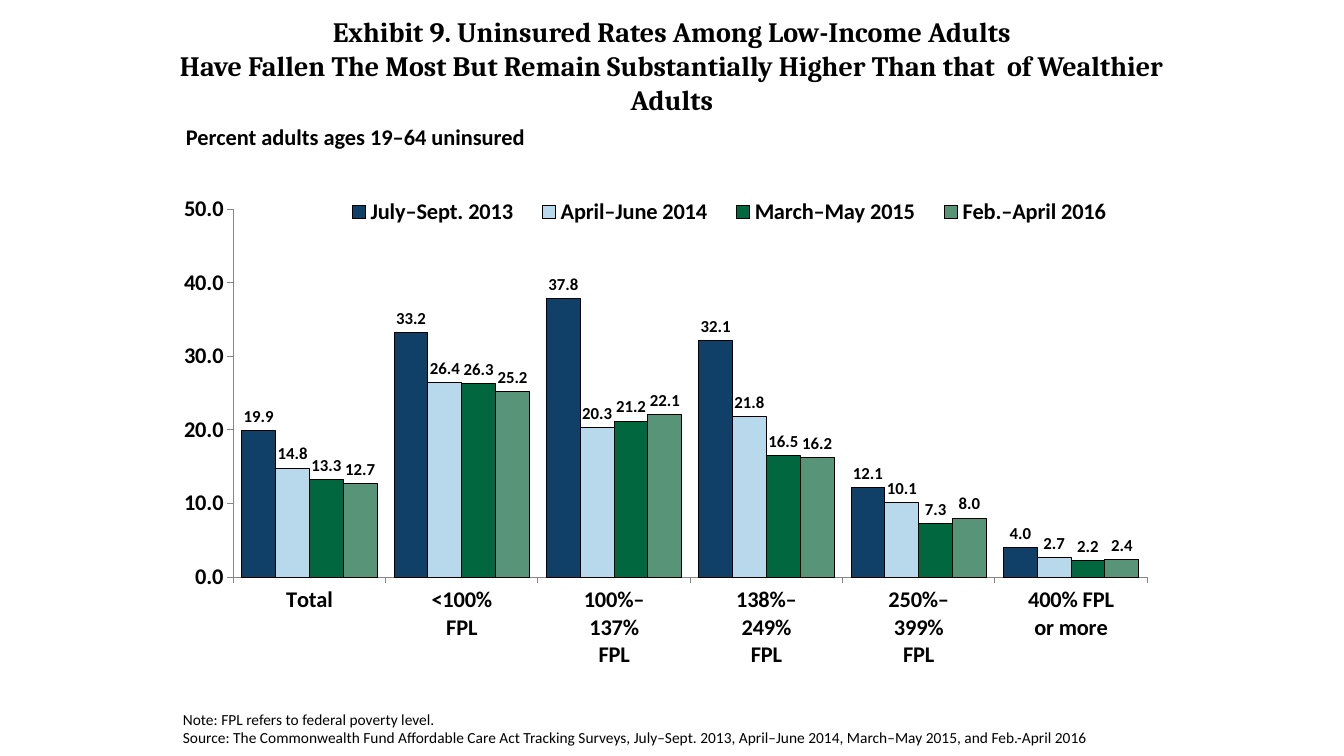
"""Build the slide on uninsured rates among adults by income."""
import dataclasses

import lxml.etree
import pptx
import pptx.chart.data
import pptx.dml.color
import pptx.enum.chart
import pptx.enum.text
import pptx.oxml.ns
import pptx.util

PX_PER_INCH = 100.8
BLACK = pptx.dml.color.RGBColor(0x00, 0x00, 0x00)
AXIS_GREY = pptx.dml.color.RGBColor(0x86, 0x86, 0x86)
NAVY = pptx.dml.color.RGBColor(0x10, 0x40, 0x68)
PALE_BLUE = pptx.dml.color.RGBColor(0xB8, 0xD9, 0xEC)
GREEN = pptx.dml.color.RGBColor(0x00, 0x67, 0x3F)
SAGE = pptx.dml.color.RGBColor(0x58, 0x94, 0x78)


@dataclasses.dataclass(frozen=True)
class Box:
    """A rectangle in px."""
    left: int
    top: int
    width: int
    height: int


@dataclasses.dataclass(frozen=True)
class Caption:
    """A block of text with one style."""
    box: Box
    paragraphs: tuple[str, ...]
    size: int
    bold: bool = False
    face: str = "Calibri"
    align: pptx.enum.text.PP_ALIGN = pptx.enum.text.PP_ALIGN.LEFT
    grows: bool = True


@dataclasses.dataclass(frozen=True)
class Survey:
    """The rates of one survey period, by income group."""
    period: str
    color: pptx.dml.color.RGBColor
    rates: tuple[float, ...]


INCOME_GROUPS = (
    "Total", "<100%\nFPL", "100%–\n137%\nFPL", "138%–\n249%\nFPL",
    "250%–\n399%\nFPL", "400% FPL\nor more",
)
SURVEYS = (
    Survey("July–Sept. 2013", NAVY, (19.9, 33.2, 37.8, 32.1, 12.1, 4.0)),
    Survey("April–June 2014", PALE_BLUE, (14.8, 26.4, 20.3, 21.8, 10.1, 2.7)),
    Survey("March–May 2015", GREEN, (13.3, 26.3, 21.2, 16.5, 7.3, 2.2)),
    Survey("Feb.–April 2016", SAGE, (12.7, 25.2, 22.1, 16.2, 8.0, 2.4)),
)
CAPTIONS = (
    Caption(
        Box(168, 10, 1008, 81),
        ("Exhibit 9. Uninsured Rates Among Low-Income Adults\v"
         "Have Fallen The Most But Remain Substantially Higher Than that  of Wealthier Adults",),
        20, True, "Cambria", pptx.enum.text.PP_ALIGN.CENTER, False,
    ),
    Caption(Box(176, 118, 428, 37), ("Percent adults ages 19–64 uninsured",), 16, True),
    Caption(
        Box(173, 705, 1003, 47),
        ("Note: FPL refers to federal poverty level.",
         "Source: The Commonwealth Fund Affordable Care Act Tracking Surveys, July–Sept. 2013, "
         "April–June 2014, March–May 2015, and Feb.-April 2016"),
        11,
    ),
)
CHART_BOX = Box(184, 184, 973, 504)


def px(length: int) -> pptx.util.Emu:
    """Turn px into EMU."""
    return pptx.util.Emu(round(length * 914400 / PX_PER_INCH))


def place(box: Box) -> tuple[pptx.util.Emu, ...]:
    """Give the left, top, width and height of a box in EMU."""
    return tuple(px(length) for length in dataclasses.astuple(box))


def style_font(font, size: int, bold: bool = True, face: str = "Calibri") -> None:
    """Set size, weight, typeface and black on a font."""
    font.size = pptx.util.Pt(size)
    font.bold = bold
    font.name = face
    font.color.rgb = BLACK


def add_caption(slide, caption: Caption) -> None:
    """Draw one caption."""
    frame = slide.shapes.add_textbox(*place(caption.box)).text_frame
    frame.word_wrap = True
    if caption.grows:
        frame.auto_size = pptx.enum.text.MSO_AUTO_SIZE.SHAPE_TO_FIT_TEXT
    frame.text = "\n".join(caption.paragraphs)
    for paragraph in frame.paragraphs:
        paragraph.alignment = caption.align
        style_font(paragraph.font, caption.size, caption.bold, caption.face)


def set_layout(parent, index: int, target: str, fractions: tuple[float, ...]) -> None:
    """Fix the place of a chart part as x, y, width and height fractions."""
    qn = pptx.oxml.ns.qn
    old = parent.find(qn("c:layout"))
    if old is not None:
        parent.remove(old)
    layout = lxml.etree.Element(qn("c:layout"))
    parent.insert(index, layout)
    manual = lxml.etree.SubElement(layout, qn("c:manualLayout"))
    settings = [("layoutTarget", target)] if target else []
    settings += [("xMode", "edge"), ("yMode", "edge")]
    settings += zip("xywh", map(str, fractions))
    for tag, value in settings:
        lxml.etree.SubElement(manual, qn(f"c:{tag}")).set("val", value)


def style_axis(axis) -> None:
    """Give an axis outer ticks, a grey line and no gridlines."""
    axis.has_major_gridlines = False
    axis.major_tick_mark = pptx.enum.chart.XL_TICK_MARK.OUTSIDE
    axis.minor_tick_mark = pptx.enum.chart.XL_TICK_MARK.NONE
    axis.format.line.color.rgb = AXIS_GREY
    axis.format.line.width = pptx.util.Pt(0.75)
    style_font(axis.tick_labels.font, 16)


def style_series(series, survey: Survey) -> None:
    """Colour the columns of a survey and label their values."""
    series.format.fill.solid()
    series.format.fill.fore_color.rgb = survey.color
    series.format.line.color.rgb = BLACK
    series.format.line.width = pptx.util.Pt(0.75)
    labels = series.data_labels
    labels.show_value = True
    labels.number_format = "0.0"
    labels.number_format_is_linked = False
    labels.position = pptx.enum.chart.XL_LABEL_POSITION.OUTSIDE_END
    style_font(labels.font, 12)


def add_rates_chart(slide) -> None:
    """Draw the columns of uninsured rates."""
    rates = pptx.chart.data.CategoryChartData(number_format="0.0")
    rates.categories = INCOME_GROUPS
    for survey in SURVEYS:
        rates.add_series(survey.period, survey.rates)
    chart = slide.shapes.add_chart(
        pptx.enum.chart.XL_CHART_TYPE.COLUMN_CLUSTERED, *place(CHART_BOX), rates
    ).chart
    chart.has_title = False
    style_font(chart.font, 13)

    plot = chart.plots[0]
    plot.gap_width = 50
    plot.overlap = 0
    plot.vary_by_categories = False
    for series, survey in zip(plot.series, SURVEYS):
        style_series(series, survey)

    style_axis(chart.category_axis)
    style_axis(chart.value_axis)
    chart.value_axis.minimum_scale = 0
    chart.value_axis.maximum_scale = 50
    chart.value_axis.major_unit = 10
    chart.value_axis.tick_labels.number_format = "0.0"
    chart.value_axis.tick_labels.number_format_is_linked = False

    chart.has_legend = True
    legend = chart.legend
    legend.position = pptx.enum.chart.XL_LEGEND_POSITION.TOP
    legend.include_in_layout = False
    style_font(legend.font, 16)
    legend_element = legend._element
    set_layout(legend_element, 1, "", (0.15, 0.02, 0.82, 0.07))
    plot_area = plot._element.getparent()
    set_layout(plot_area, 0, "inner", (0.05, 0.05, 0.94, 0.73))


def main() -> None:
    """Build and save the slide."""
    deck = pptx.Presentation()
    deck.slide_width = px(1344)
    deck.slide_height = px(756)
    slide = deck.slides.add_slide(deck.slide_layouts[6])
    add_rates_chart(slide)
    for caption in CAPTIONS:
        add_caption(slide, caption)
    deck.save("out.pptx")


if __name__ == "__main__":
    main()
